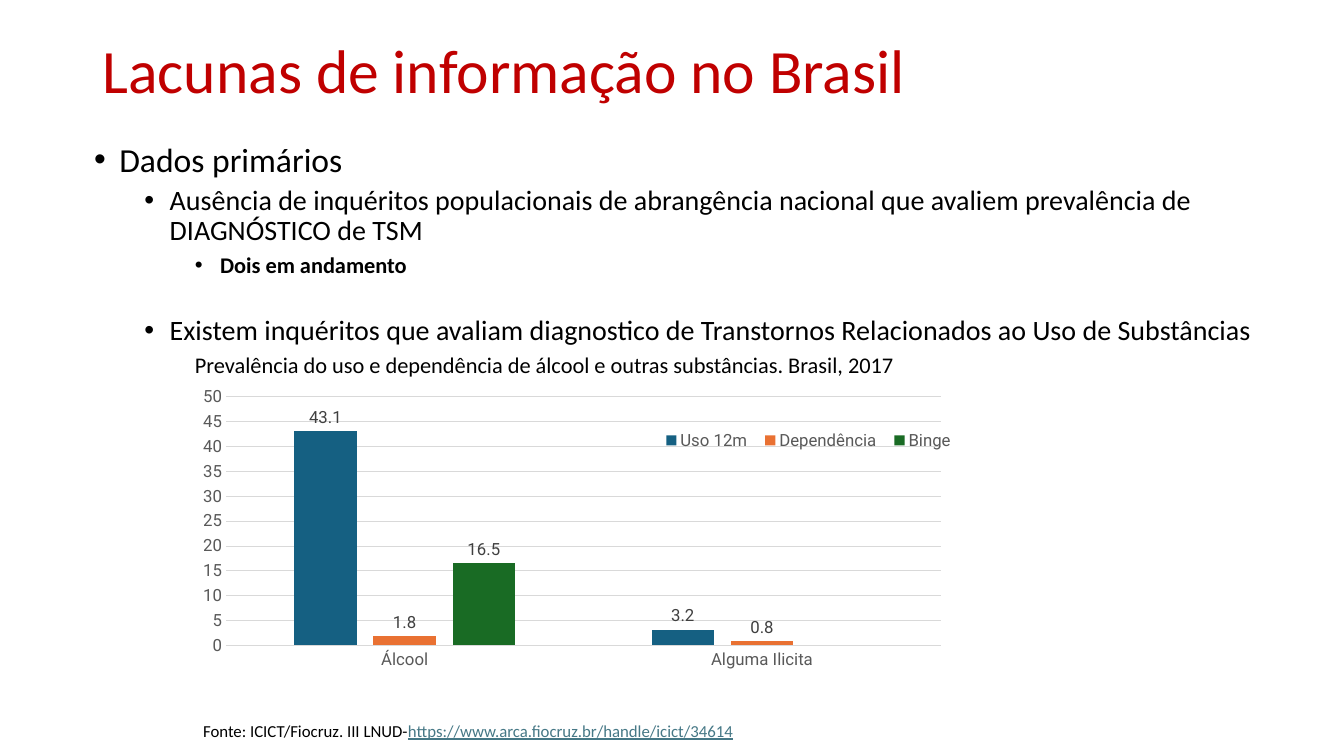
"""Builds the slide on information gaps in Brazil with its prevalence chart."""
from lxml import etree
from pptx import Presentation, util as u
from pptx.chart import data as chart_data
from pptx.dml import color
from pptx.enum import chart as ch, text
from pptx.oxml import ns

BODY_FONT, CHART_FONT = "Calibri", "Roboto"
BLACK, RED, LINK = "000000", "C00000", "467886"
GRID, AXIS, LABEL = "D9D9D9", "595959", "404040"
SERIES = {
    "Uso 12m": ((43.1, 3.2), "156082"),
    "Dependência": ((1.8, 0.8), "E97132"),
    "Binge": ((16.5, None), "196B24"),
}
POINTS = [
    ("Dados primários", 18, True, 0, dict(size=24)),
    ("Ausência de inquéritos populacionais de abrangência nacional que avaliem "
     "prevalência de DIAGNÓSTICO de TSM", 54, True, 5, dict(size=20)),
    ("Dois em andamento", 90, True, 5, dict(size=16, bold=True)),
    ("Existem inquéritos que avaliam diagnostico de Transtornos Relacionados "
     "ao Uso de Substâncias", 54, True, 27.6, dict(size=20)),
    ("Prevalência do uso e dependência de álcool e outras substâncias. "
     "Brasil, 2017", 72, False, 5, dict(size=16)),
]


def rgb(value):
    return color.RGBColor.from_string(value)


class SlideBuilder:
    def __init__(self, deck):
        self.page = deck.slides.add_slide(deck.slide_layouts[1])

    def style(self, font, **values):
        values = dict(name=BODY_FONT, color=BLACK) | values
        font.color.rgb = rgb(values.pop("color"))
        values["size"] = u.Pt(values["size"])
        for name, value in values.items():
            setattr(font, name, value)

    def place(self, box, left, top, width, height):
        for name, value in dict(left=left, top=top, width=width, height=height).items():
            setattr(box, name, u.Pt(value))

    def indent(self, para, left, bullet=False):
        props = para._p.get_or_add_pPr()
        props.set("marL", str(u.Pt(left)))
        props.set("indent", str(u.Pt(-18 if bullet else 0)))
        if bullet:
            etree.SubElement(props, ns.qn("a:buFont"), typeface="Arial")
            etree.SubElement(props, ns.qn("a:buChar"), char="•")
        else:
            etree.SubElement(props, ns.qn("a:buNone"))

    def span(self, para, words, **values):
        span = para.add_run()
        span.text = words
        self.style(span.font, **values)

    def title(self, words, *area):
        box = self.page.shapes.title
        self.place(box, *area)
        frame = box.text_frame
        frame.auto_size = text.MSO_AUTO_SIZE.NONE
        frame.vertical_anchor = text.MSO_ANCHOR.MIDDLE
        para = frame.paragraphs[0]
        para.alignment = text.PP_ALIGN.LEFT
        para.line_spacing = 0.9
        self.span(para, words, size=44, color=RED)

    def body(self, points, *area):
        box = self.page.placeholders[1]
        self.place(box, *area)
        frame = box.text_frame
        frame.auto_size = text.MSO_AUTO_SIZE.NONE
        levels = sorted({left for _, left, bullet, _, _ in points if bullet})
        for index, (words, left, bullet, before, values) in enumerate(points):
            para = frame.add_paragraph() if index else frame.paragraphs[0]
            para.level = levels.index(left) if bullet else 2
            self.indent(para, left, bullet)
            para.line_spacing = 0.9
            para.space_before = u.Pt(before)
            self.span(para, words, **values)

    def source(self, words, address, *area):
        box = self.page.shapes.add_textbox(*map(u.Pt, area))
        box.text_frame.word_wrap = True
        para = box.text_frame.paragraphs[0]
        self.indent(para, 72)
        self.span(para, words, size=12)
        self.span(para, address, size=12, color=LINK, underline=True)

    def layout(self, parent, x, y, w, h, inner=False):
        for old in parent.findall(ns.qn("c:layout")):
            parent.remove(old)
        layout = etree.Element(ns.qn("c:layout"))
        manual = etree.SubElement(layout, ns.qn("c:manualLayout"))
        values = dict(xMode="edge", yMode="edge", x=x, y=y, w=w, h=h)
        if inner:
            values = dict(layoutTarget="inner") | values
        for name, value in values.items():
            etree.SubElement(manual, ns.qn(f"c:{name}"), val=str(value))
        parent.insert(0 if inner else 1, layout)

    def axis(self, axis):
        axis.major_tick_mark = axis.minor_tick_mark = ch.XL_TICK_MARK.NONE
        self.style(axis.tick_labels.font, name=CHART_FONT, size=12, color=AXIS)

    def grey_line(self, line):
        line.color.rgb = rgb(GRID)
        line.width = u.Pt(0.75)

    def chart(self, categories, series, *area):
        data = chart_data.CategoryChartData()
        data.categories = categories
        for name, (values, _) in series.items():
            data.add_series(name, values)
        chart = self.page.shapes.add_chart(
            ch.XL_CHART_TYPE.COLUMN_CLUSTERED, *map(u.Pt, area), data).chart
        self.style(chart.font, name=CHART_FONT, size=10)
        chart.has_title = False
        self.axis(chart.category_axis)
        self.grey_line(chart.category_axis.format.line)
        scale = chart.value_axis
        self.axis(scale)
        scale.minimum_scale, scale.maximum_scale, scale.major_unit = 0, 50, 5
        scale.format.line.fill.background()
        self.grey_line(scale.major_gridlines.format.line)
        plot = chart.plots[0]
        plot.gap_width, plot.overlap, plot.vary_by_categories = 219, -27, False
        for column, (_, fill) in zip(plot.series, series.values()):
            column.format.fill.solid()
            column.format.fill.fore_color.rgb = rgb(fill)
            labels = column.data_labels
            labels.show_value = True
            labels.position = ch.XL_LABEL_POSITION.OUTSIDE_END
            self.style(labels.font, name=CHART_FONT, size=12, color=LABEL)
        chart.has_legend = True
        legend = chart.legend
        legend.position = ch.XL_LEGEND_POSITION.BOTTOM
        legend.include_in_layout = False
        self.style(legend.font, name=CHART_FONT, size=12, color=AXIS)
        self.layout(legend._element, 0.6, 0.14, 0.4, 0.09)
        plot_area = chart._chartSpace.find(f".//{ns.qn('c:plotArea')}")
        self.layout(plot_area, 0.046, 0.056, 0.925, 0.737, inner=True)


def main():
    deck = Presentation()
    deck.slide_width, deck.slide_height = u.Pt(960), u.Pt(540)
    builder = SlideBuilder(deck)
    builder.title("Lacunas de informação no Brasil", 66, 0, 828, 104.4)
    builder.body(POINTS, 60, 98.6, 856.8, 342.7)
    builder.chart(("Álcool", "Alguma Ilicita"), SERIES, 136, 270, 552, 241)
    builder.source("Fonte: ICICT/Fiocruz. III LNUD-",
                   "https://www.arca.fiocruz.br/handle/icict/34614",
                   66, 511.2, 659, 21.6)
    deck.save("out.pptx")


if __name__ == "__main__":
    main()
